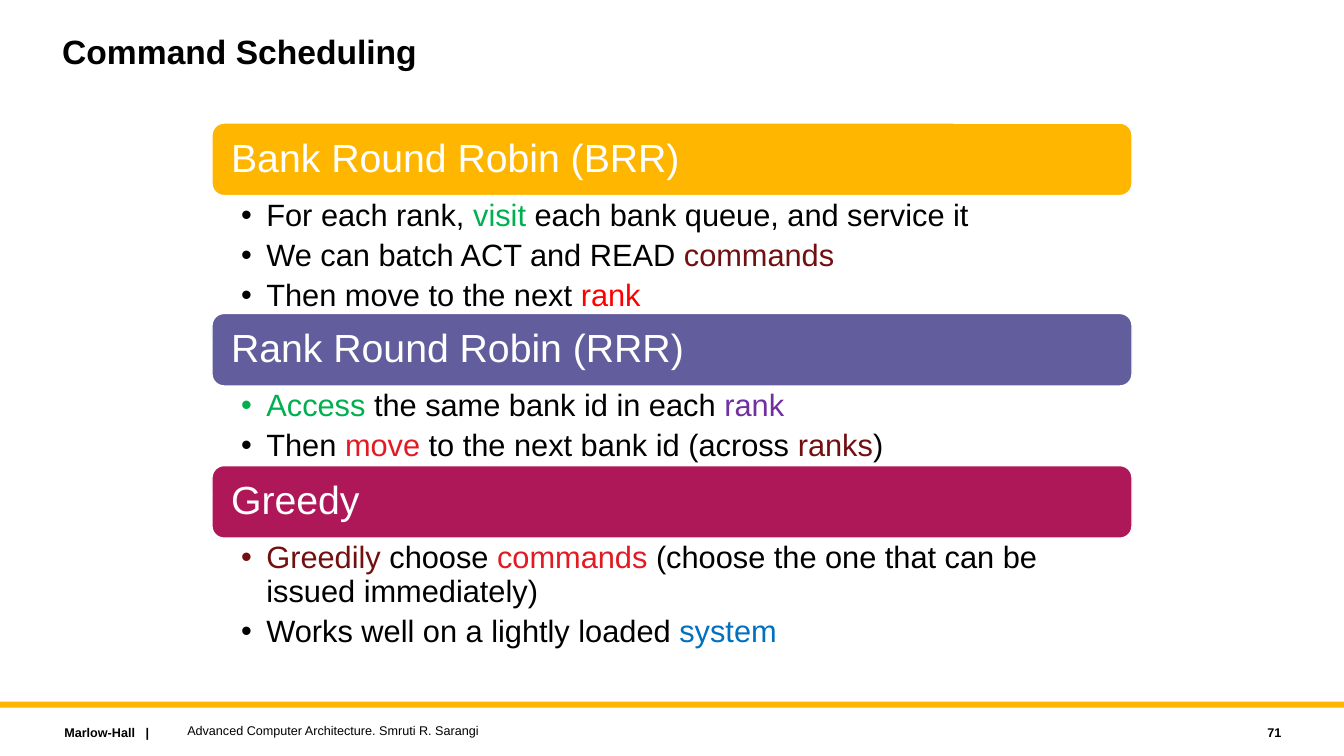
from lxml import etree
from pptx import Presentation
from pptx.dml.color import RGBColor
from pptx.enum import shapes, text
from pptx.oxml import ns
from pptx.util import Pt

COLORS = {
    "black": "000000", "white": "FFFFFF", "gold": "FFB600", "violet": "625D9C",
    "berry": "AF1858", "green": "00B050", "maroon": "720F11", "red": "FF0000",
    "crimson": "E21A23", "purple": "7030A0", "blue": "0070C0",
}


def write(shape, paragraphs, size, color="black", bold=False, align="LEFT", anchor="TOP",
          insets=(7.2, 3.6, 7.2, 3.6), spacing=1.0, after=0, bullet=False):
    frame = shape.text_frame
    frame.word_wrap = True
    frame.vertical_anchor = getattr(text.MSO_ANCHOR, anchor)
    frame.margin_left, frame.margin_top, frame.margin_right, frame.margin_bottom = map(Pt, insets)
    for index, runs in enumerate(paragraphs):
        paragraph = frame.add_paragraph() if index else frame.paragraphs[0]
        paragraph.alignment = getattr(text.PP_ALIGN, align)
        paragraph.line_spacing = spacing
        paragraph.space_after = Pt(after)
        if bullet:
            properties = paragraph._p.get_or_add_pPr()
            properties.set("marL", str(Pt(18)))
            properties.set("indent", str(-Pt(18)))
            etree.SubElement(properties, ns.qn("a:buFont")).set("typeface", "Arial")
            etree.SubElement(properties, ns.qn("a:buChar")).set("char", "•")
        for words, run_color in runs:
            run = paragraph.add_run()
            run.text = words
            run.font.name = "Arial"
            run.font.size = Pt(size)
            run.font.bold = bold
            run.font.color.rgb = RGBColor.from_string(COLORS[run_color or color])


deck = Presentation()
deck.slide_width, deck.slide_height = Pt(960), Pt(540)
slide = deck.slides.add_slide(deck.slide_layouts[6])

footer_rule = slide.shapes.add_shape(
    shapes.MSO_SHAPE.RECTANGLE, Pt(0), Pt(501.1), Pt(960), Pt(4.3))
footer_rule.shadow.inherit = False
footer_rule.fill.solid()
footer_rule.fill.fore_color.rgb = RGBColor.from_string(COLORS["gold"])
footer_rule.line.fill.background()

labels = [
    ("Command Scheduling", (37.4, 21.6, 720, 64.8), dict(size=24, bold=True, spacing=0.9)),
    ("Marlow-Hall   |", (38.9, 514.1, 163.4, 18), dict(size=9, bold=True)),
    ("Advanced Computer Architecture. Smruti R. Sarangi", (126.7, 512.6, 576, 18),
     dict(size=9, anchor="MIDDLE")),
    ("71", (821.5, 514.1, 100.8, 18), dict(size=9, bold=True, align="RIGHT", anchor="MIDDLE")),
]
for words, place, style in labels:
    write(slide.shapes.add_textbox(*map(Pt, place)), [[(words, None)]], **style)

policies = [
    ("Bank Round Robin (BRR)", "gold", 84.2, [
        [("For each rank, ", None), ("visit", "green"),
         (" each bank queue, and service it", None)],
        [("We can batch ACT and READ ", None), ("commands", "maroon")],
        [("Then move to the next ", None), ("rank", "red")],
    ]),
    ("Rank Round Robin (RRR)", "violet", 56.9, [
        [("Access", "green"), (" the same bank id in each ", None), ("rank", "purple")],
        [("Then ", None), ("move", "crimson"), (" to the next bank id (across ", None),
         ("ranks", "maroon"), (")", None)],
    ]),
    ("Greedy", "berry", 79.9, [
        [("Greedily", "maroon"), (" choose ", None), ("commands", "crimson"),
         (" (choose the one that can be issued immediately)", None)],
        [("Works well on a lightly loaded ", None), ("system", "blue")],
    ]),
]
left, width, band_height = Pt(151.4), Pt(657.2), 51.8
top = 87.9
for policy, band_color, details_height, details in policies:
    band = slide.shapes.add_shape(
        shapes.MSO_SHAPE.ROUNDED_RECTANGLE, left, Pt(top), width, Pt(band_height))
    band.shadow.inherit = False
    band.fill.solid()
    band.fill.fore_color.rgb = RGBColor.from_string(COLORS[band_color])
    band.line.color.rgb = RGBColor.from_string(COLORS["white"])
    band.line.width = Pt(1)
    write(band, [[(policy, None)]], size=28, color="white", anchor="MIDDLE",
          insets=(11.2, 8.4, 11.2, 8.4), spacing=0.9)
    top += band_height

    details_box = slide.shapes.add_textbox(left, Pt(top), width, Pt(details_height))
    write(details_box, details, size=22, insets=(20.9, 2.9, 15.8, 2.9),
          spacing=0.9, after=5, bullet=True)
    top += details_height

deck.save("out.pptx")
